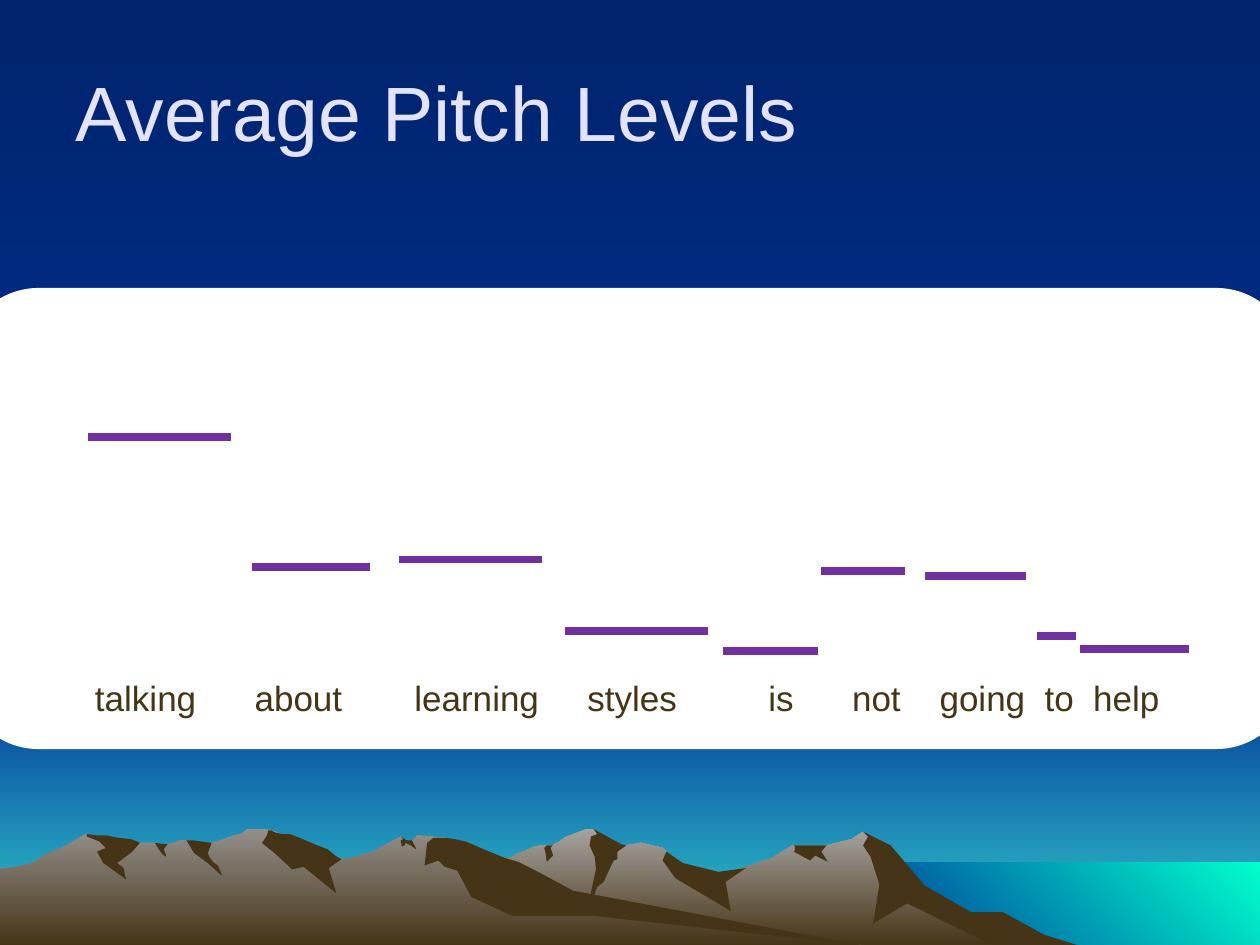
from pptx import Presentation
from pptx.dml.color import RGBColor
from pptx.enum.shapes import MSO_CONNECTOR as Connector, MSO_SHAPE as Shape
from pptx.enum.text import MSO_ANCHOR as Anchor, MSO_AUTO_SIZE as AutoSize, PP_ALIGN as Align
from pptx.oxml.ns import qn
from pptx.util import Pt
from lxml.etree import SubElement

NIGHT = RGBColor(0x00, 0x24, 0x6D)
BLUE = RGBColor(0x00, 0x33, 0x99)
TEAL = RGBColor(0x33, 0xCC, 0xCC)
AQUA = RGBColor(0x00, 0xFF, 0xCC)
LIGHT_ROCK = RGBColor(0xA5, 0xA2, 0x9F)
ROCK = RGBColor(0x93, 0x8F, 0x8B)
BROWN = RGBColor(0x46, 0x34, 0x16)
WHITE = RGBColor(0xFF, 0xFF, 0xFF)
LAVENDER = RGBColor(0xE3, 0xE3, 0xFF)
PURPLE = RGBColor(0x70, 0x30, 0xA0)

DOWN, UP_RIGHT = 270, 45
OUTLINE_UNIT = Pt(0.72)  # outlines are in hundredths of an inch

RIGHT_RANGE = [
    (802, 740), (778, 727), (764, 723), (723, 698), (702, 671), (685, 660), (676, 666),
    (656, 671), (629, 671), (613, 681), (566, 697), (536, 690), (529, 676), (526, 673),
    (509, 669), (497, 671), (486, 673), (474, 661), (471, 658), (465, 658), (450, 664),
    (448, 665), (444, 668), (438, 671), (430, 671), (424, 672), (418, 675), (412, 677),
    (405, 681), (399, 683), (394, 685), (355, 698), (327, 709), (277, 739), (258, 751),
    (821, 751)]
LEFT_RANGE = [
    (690, 751), (667, 748), (432, 712), (354, 665), (331, 663), (327, 668), (323, 668),
    (318, 664), (296, 676), (279, 681), (271, 682), (260, 676), (236, 681), (223, 663),
    (219, 660), (215, 659), (212, 658), (196, 658), (194, 660), (191, 662), (186, 663),
    (178, 666), (168, 669), (160, 671), (148, 667), (143, 667), (132, 671), (128, 671),
    (123, 669), (111, 669), (94, 671), (68, 662), (56, 669), (53, 671), (46, 674),
    (35, 679), (26, 685), (14, 688), (0, 690), (0, 751)]
RIGHT_SHADOWS = [
    [(796, 724), (771, 724), (734, 703), (707, 671), (685, 660), (689, 664), (685, 671),
     (691, 680), (698, 702), (693, 733), (720, 717), (792, 752), (858, 751), (829, 742)],
    [(471, 658), (474, 662), (469, 664), (468, 671), (472, 680), (473, 690), (465, 727),
     (474, 704), (479, 700), (487, 683), (490, 682), (490, 676), (497, 671), (493, 670)],
    [(529, 676), (528, 678), (526, 683), (536, 697), (580, 723), (576, 700), (592, 689),
     (570, 692), (542, 685)],
    [(650, 671), (630, 671), (631, 672), (631, 675), (630, 676), (643, 683), (647, 679),
     (657, 684), (652, 676), (656, 671)],
    [(433, 677), (432, 673), (434, 671), (438, 671), (439, 670), (437, 673), (439, 679),
     (434, 684)]]
LEFT_SHADOWS = [
    [(212, 663), (208, 669), (219, 678), (232, 690), (241, 688), (267, 709), (261, 689),
     (271, 682), (266, 679), (260, 674), (252, 671), (245, 668), (238, 665), (230, 662),
     (224, 662), (219, 661), (215, 659), (213, 659)],
    [(370, 668), (361, 666), (354, 665), (344, 665), (339, 669), (337, 687), (348, 683),
     (353, 688), (363, 691), (374, 712), (407, 727), (472, 727), (690, 751), (683, 750),
     (455, 707), (427, 692), (411, 684), (401, 681), (386, 675)],
    [(318, 667), (320, 666), (318, 664), (323, 667), (327, 667), (330, 673), (330, 674),
     (326, 671), (322, 669), (321, 671), (319, 672)],
    [(154, 667), (161, 668), (168, 669), (165, 677), (166, 680), (169, 684), (173, 687),
     (176, 694), (176, 695), (165, 685), (154, 677), (148, 667)],
    [(133, 670), (130, 674), (132, 679), (132, 680), (129, 678), (126, 674), (123, 669)],
    [(109, 668), (111, 669), (105, 676), (93, 685), (98, 689), (100, 698), (82, 685),
     (77, 676), (84, 673), (79, 668), (69, 664), (69, 662), (77, 663), (84, 663),
     (94, 665), (104, 666)]]

# Box left, width, left inset, words, tab stops
WORD_GROUPS = [
    (36, 681.1, 18.3, ["talking", "about"], [91.2]),
    (229.7, 195.8, 7.2, ["learning", "styles"], [98.9]),
    (432, 251.3, 7.2, ["is", "not", "going", "to", "help"], [47.8, 97.8, 157.8, 185.6])]

# Start, end and height of the level above each word
PITCH_LEVELS = [
    (50.4, 131.8, 249.8), (144, 211.7, 324), (228.2, 309.6, 319.7),
    (322.6, 404.6, 360.7), (413.3, 467.3, 372.2), (469.4, 517, 326.2),
    (528.5, 586.1, 329), (592.6, 614.9, 363.6), (617, 679.7, 370.8)]


class SlideBuilder:
    font = "Arial"
    title_size = 44
    word_size = 20

    def __init__(self, slide):
        self.slide = slide
        self.shapes = slide.shapes

    def gradient(self, fill, first, last, angle):
        fill.gradient()
        fill.gradient_angle = angle
        for stop, color in zip(fill.gradient_stops, (first, last)):
            stop.color.rgb = color

    def paint(self, shape, colors, angle=DOWN):
        """Fill with one colour, or with a gradient of two, and drop line and shadow."""
        shape.shadow.inherit = False
        shape.line.fill.background()
        if len(colors) == 2:
            self.gradient(shape.fill, *colors, angle)
        else:
            shape.fill.solid()
            shape.fill.fore_color.rgb = colors[0]

    def block(self, kind, left, top, width, height, *colors, angle=DOWN):
        shape = self.shapes.add_shape(kind, Pt(left), Pt(top), Pt(width), Pt(height))
        self.paint(shape, colors, angle)
        return shape

    def outline(self, points, *colors):
        builder = self.shapes.build_freeform(*points[0], scale=OUTLINE_UNIT)
        builder.add_line_segments(points[1:], close=True)
        self.paint(builder.convert_to_shape(), colors)

    def run(self, paragraph, text, size, color):
        run = paragraph.add_run()
        run.text = text
        run.font.name = self.font
        run.font.size = Pt(size)
        run.font.color.rgb = color

    def title(self, text):
        title = self.shapes.title
        title.left, title.top, title.width, title.height = Pt(36), Pt(18), Pt(648), Pt(90)
        title.text_frame.vertical_anchor = Anchor.MIDDLE
        paragraph = title.text_frame.paragraphs[0]
        paragraph.alignment = Align.LEFT
        self.run(paragraph, text, self.title_size, LAVENDER)
        title._element.getparent().append(title._element)  # in front of the scenery

    def words(self, left, width, inset, words, stops):
        box = self.shapes.add_textbox(Pt(left), Pt(383), Pt(width), Pt(31.5))
        frame = box.text_frame
        frame.word_wrap = True
        frame.auto_size = AutoSize.SHAPE_TO_FIT_TEXT
        frame.margin_left = Pt(inset)
        paragraph = frame.paragraphs[0]
        tabs = SubElement(paragraph._p.get_or_add_pPr(), qn("a:tabLst"))
        for stop in stops:
            SubElement(tabs, qn("a:tab"), pos=str(Pt(stop)), algn="l")
        self.run(paragraph, "\t".join(words), self.word_size, BROWN)

    def level(self, start, end, height):
        line = self.shapes.add_connector(
            Connector.STRAIGHT, Pt(start), Pt(height), Pt(end), Pt(height))
        line.line.color.rgb = PURPLE
        line.line.width = Pt(4.5)
        SubElement(line._element.spPr, qn("a:effectLst"))


def main():
    presentation = Presentation()
    presentation.slide_width, presentation.slide_height = Pt(720), Pt(540)
    slide = presentation.slides.add_slide(presentation.slide_layouts[5])
    builder = SlideBuilder(slide)

    builder.gradient(slide.background.fill, NIGHT, BLUE, DOWN)
    builder.block(Shape.RECTANGLE, 0, 384, 720, 156, BLUE, TEAL)
    builder.block(Shape.RECTANGLE, 0, 0, 720, 384, NIGHT, BLUE)
    builder.block(Shape.RECTANGLE, 492, 493, 228, 48, BLUE, AQUA, angle=UP_RIGHT)
    for mountains, top_color, shadows in ((RIGHT_RANGE, LIGHT_ROCK, RIGHT_SHADOWS),
                                          (LEFT_RANGE, ROCK, LEFT_SHADOWS)):
        builder.outline(mountains, top_color, BROWN)
        for shadow in shadows:
            builder.outline(shadow, BROWN)

    panel = builder.block(Shape.ROUNDED_RECTANGLE, -21.6, 164.9, 760.3, 262.8, WHITE)
    panel.line.color.rgb = WHITE
    panel.line.width = Pt(0.75)
    builder.title("Average Pitch Levels")
    for group in WORD_GROUPS:
        builder.words(*group)
    for pitch in PITCH_LEVELS:
        builder.level(*pitch)

    presentation.save("out.pptx")


if __name__ == "__main__":
    main()
